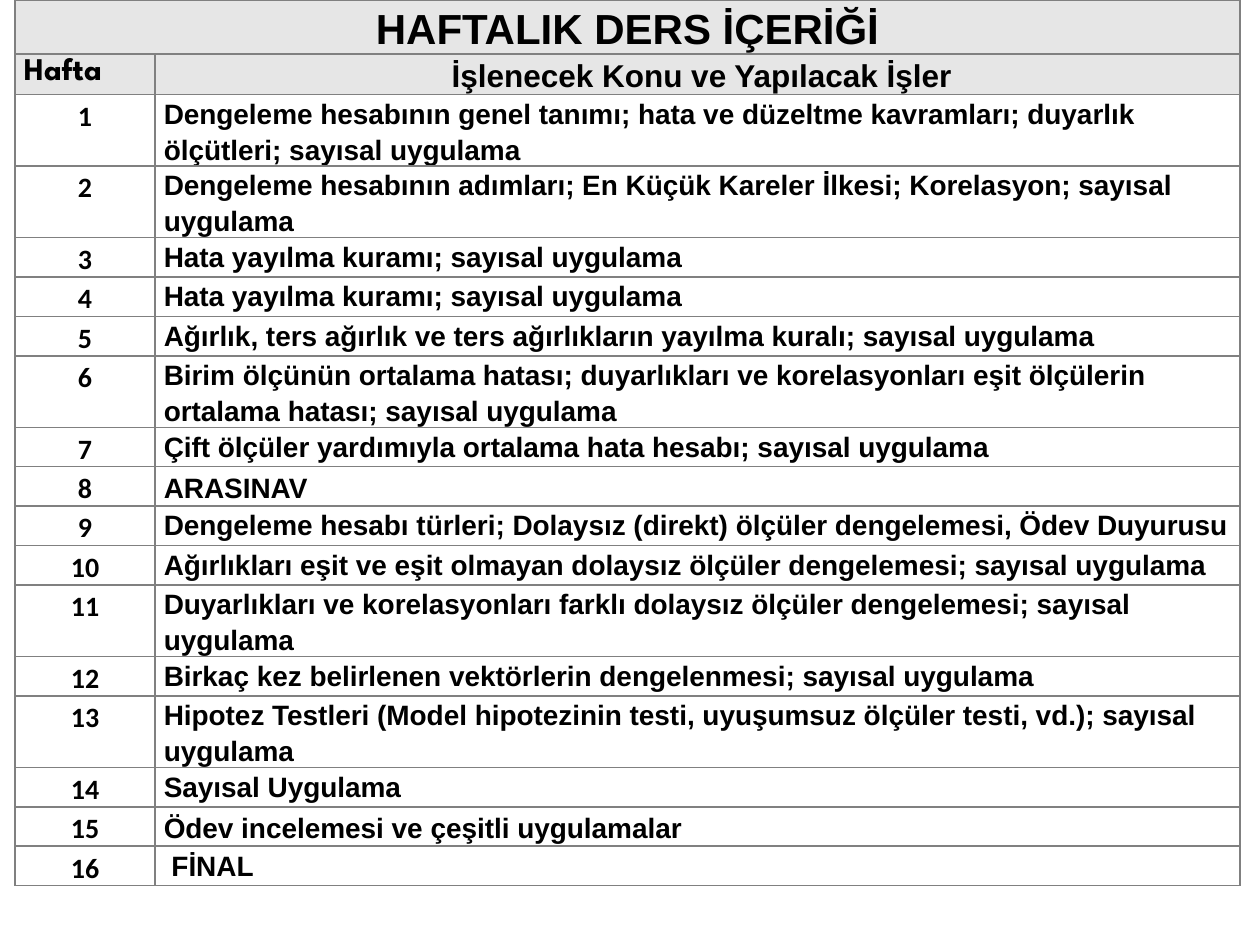
from pptx import Presentation
from pptx.dml.color import RGBColor
from pptx.enum.text import MSO_ANCHOR, PP_ALIGN as Align
from pptx.oxml import parse_xml
from pptx.oxml.ns import nsdecls
from pptx.util import Inches, Pt

TITLE = "HAFTALIK DERS İÇERİĞİ"
HEADERS = ("Hafta", " İşlenecek Konu ve Yapılacak İşler")
TOPICS = [
    "Dengeleme hesabının genel tanımı; hata ve düzeltme kavramları; duyarlık ölçütleri; sayısal uygulama",
    "Dengeleme hesabının adımları; En Küçük Kareler İlkesi; Korelasyon; sayısal uygulama",
    "Hata yayılma kuramı; sayısal uygulama",
    "Hata yayılma kuramı; sayısal uygulama",
    "Ağırlık, ters ağırlık ve ters ağırlıkların yayılma kuralı; sayısal uygulama",
    "Birim ölçünün ortalama hatası; duyarlıkları ve korelasyonları eşit ölçülerin ortalama hatası; sayısal uygulama",
    "Çift ölçüler yardımıyla ortalama hata hesabı; sayısal uygulama",
    "ARASINAV",
    "Dengeleme hesabı türleri; Dolaysız (direkt) ölçüler dengelemesi, Ödev Duyurusu",
    "Ağırlıkları eşit ve eşit olmayan dolaysız ölçüler dengelemesi; sayısal uygulama",
    "Duyarlıkları ve korelasyonları farklı dolaysız ölçüler dengelemesi; sayısal uygulama",
    "Birkaç kez belirlenen vektörlerin dengelenmesi; sayısal uygulama",
    "Hipotez Testleri (Model hipotezinin testi, uyuşumsuz ölçüler testi, vd.); sayısal uygulama",
    "Sayısal Uygulama",
    "Ödev incelemesi ve çeşitli uygulamalar",
    " FİNAL",
]
MIDDLE_WEEKS = (8, 15)

THEME = {
    "text": RGBColor(0x00, 0x00, 0x00),
    "header_fill": RGBColor(0xE6, 0xE6, 0xE6),
    "border": "808080",
    "title": {"name": "Arial", "size": Pt(24)},
    "week_header": {"name": "League Spartan", "size": Pt(18)},
    "topic_header": {"name": "Arial", "size": Pt(18)},
    "week": {"name": "Calibri", "size": Pt(16)},
    "topic": {"name": "Arial", "size": Pt(16)},
}
COLUMN_WIDTHS = (1.11, 8.61)
ROW_HEIGHT = 0.24  # least height; rows grow with their text
CELL_FORMAT = {"margin_left": Inches(0.07), "margin_right": Inches(0.07),
               "margin_top": 0, "margin_bottom": 0}


def add_borders(cell):
    properties = cell._tc.get_or_add_tcPr()
    for position, side in enumerate(("lnL", "lnR", "lnT", "lnB")):
        properties.insert(position, parse_xml(
            f'<a:{side} {nsdecls("a")} w="{Pt(1)}"><a:solidFill>'
            f'<a:srgbClr val="{THEME["border"]}"/></a:solidFill></a:{side}>'))


def fill_cell(cell, text, style, align, header=False, anchor=MSO_ANCHOR.TOP):
    for name, value in CELL_FORMAT.items():
        setattr(cell, name, value)
    cell.vertical_anchor = anchor
    if header:
        cell.fill.solid()
        cell.fill.fore_color.rgb = THEME["header_fill"]
    else:
        cell.fill.background()
    add_borders(cell)
    para = cell.text_frame.paragraphs[0]
    para.alignment, para.line_spacing = align, 1.15
    span = para.add_run()
    span.text = text
    for name, value in {**THEME[style], "bold": True}.items():
        setattr(span.font, name, value)
    span.font.color.rgb = THEME["text"]


def main():
    deck = Presentation()
    deck.slide_width, deck.slide_height = Inches(10), Inches(7.5)
    page = deck.slides.add_slide(deck.slide_layouts[6])
    frame = page.shapes.add_table(len(TOPICS) + 2, 2, Inches(0.12), 0,
                                  Inches(sum(COLUMN_WIDTHS)), Inches(7.53))
    schedule = frame.table
    for column, width in zip(schedule.columns, COLUMN_WIDTHS):
        column.width = Inches(width)
    for row in schedule.rows:
        row.height = Inches(ROW_HEIGHT)
    frame.height = Inches(7.53)

    schedule.cell(0, 0).merge(schedule.cell(0, 1))
    add_borders(schedule.cell(0, 1))
    fill_cell(schedule.cell(0, 0), TITLE, "title", Align.CENTER, header=True)
    fill_cell(schedule.cell(1, 0), HEADERS[0], "week_header", Align.JUSTIFY, header=True)
    fill_cell(schedule.cell(1, 1), HEADERS[1], "topic_header", Align.CENTER, header=True)
    for week, topic in enumerate(TOPICS, start=1):
        anchor = MSO_ANCHOR.MIDDLE if week in MIDDLE_WEEKS else MSO_ANCHOR.TOP
        fill_cell(schedule.cell(week + 1, 0), str(week), "week", Align.CENTER)
        fill_cell(schedule.cell(week + 1, 1), topic, "topic", Align.LEFT, anchor=anchor)
    deck.save("out.pptx")


if __name__ == "__main__":
    main()
